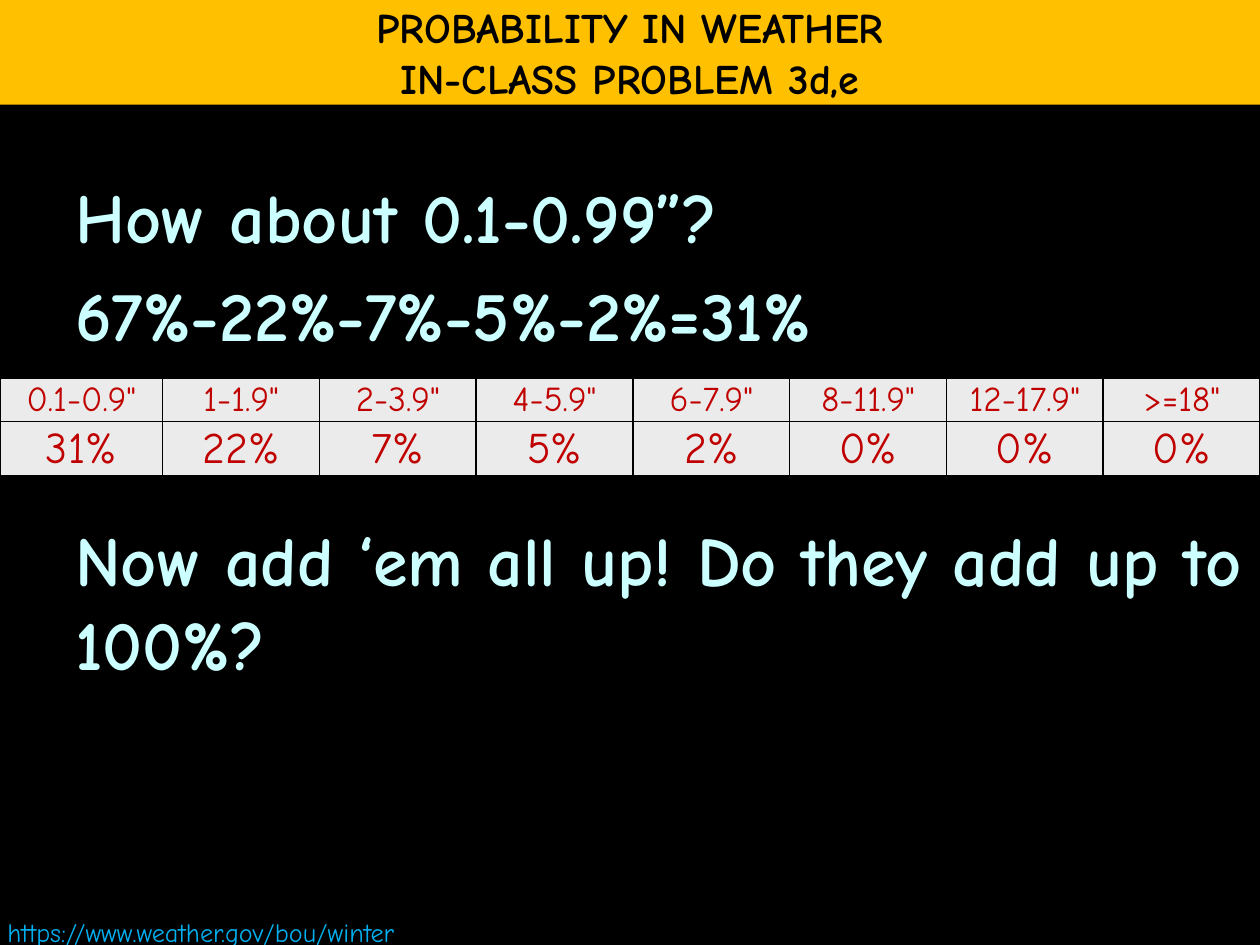
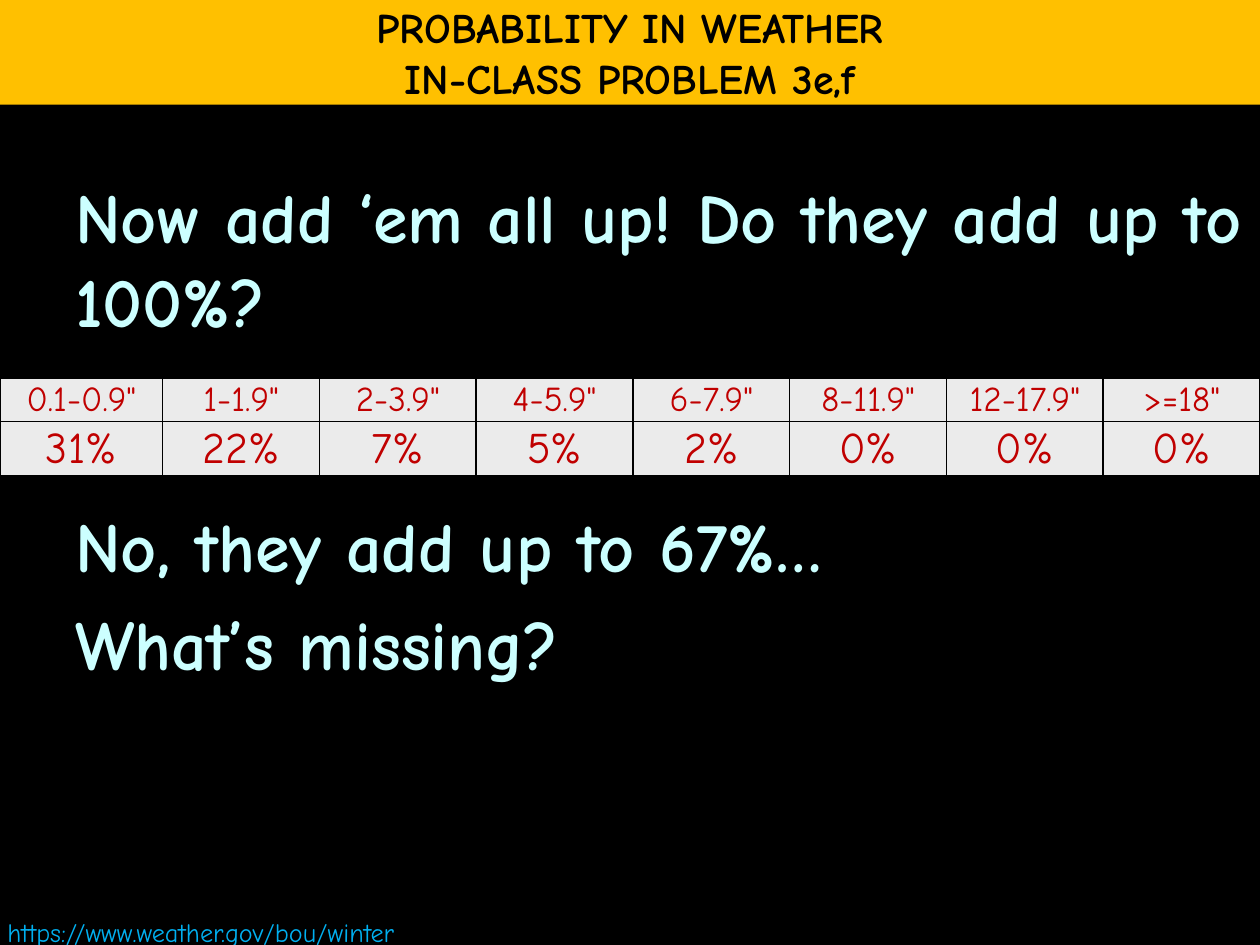
"""Build two weather probability slides with a shared snowfall table."""
from dataclasses import dataclass

from lxml import etree
from pptx import Presentation
from pptx.dml.color import RGBColor
from pptx.enum import shapes, text
from pptx.oxml import ns
from pptx.util import Cm, Length, Pt

BLACK = RGBColor(0x00, 0x00, 0x00)
AMBER = RGBColor(0xFF, 0xC0, 0x00)
PALE_CYAN = RGBColor(0xCC, 0xFF, 0xFF)
LINK_BLUE = RGBColor(0x00, 0xB0, 0xF0)
DARK_RED = RGBColor(0xC0, 0x00, 0x00)
LIGHT_GREY = RGBColor(0xEB, 0xEB, 0xEB)

FONT = "Comic Neue"
WIDTH, HEIGHT = Cm(25.4), Cm(19.05)
TITLE = "PROBABILITY IN WEATHER"
SOURCE = "https://www.weather.gov/bou/winter"
LINE_GAP, TABLE_GAP = Pt(8), Pt(92)
FIRST_COLUMN = Cm(3.28)
CELL_INSET = Cm(0.03)


@dataclass(frozen=True)
class TextStyle:
    size: int
    color: RGBColor
    bold: bool = False
    align: text.PP_ALIGN = text.PP_ALIGN.LEFT


@dataclass(frozen=True)
class TableRow:
    height: Length
    style: TextStyle
    values: tuple[str, ...]


@dataclass(frozen=True)
class Problem:
    number: str
    above: tuple[str, ...]
    below: tuple[str, ...]


TITLE_STYLE = TextStyle(24, BLACK, True, text.PP_ALIGN.CENTER)
BODY_STYLE = TextStyle(40, PALE_CYAN, True)
SOURCE_STYLE = TextStyle(15, LINK_BLUE)
RANGE_STYLE = TextStyle(20, DARK_RED, align=text.PP_ALIGN.CENTER)
CHANCE_STYLE = TextStyle(25, DARK_RED, align=text.PP_ALIGN.CENTER)

SNOWFALL = (
    TableRow(Cm(0.87), RANGE_STYLE, (
        '0.1-0.9"', '1-1.9"', '2-3.9"', '4-5.9"',
        '6-7.9"', '8-11.9"', '12-17.9"', '>=18"')),
    TableRow(Cm(1.08), CHANCE_STYLE, (
        "31%", "22%", "7%", "5%", "2%", "0%", "0%", "0%")),
)

ADD_UP = "Now add ‘em all up! Do they add up to 100%?"
PROBLEMS = (
    Problem("3d,e", ("How about 0.1-0.99”?", "67%-22%-7%-5%-2%=31%"), (ADD_UP,)),
    Problem("3e,f", (ADD_UP,), ("No, they add up to 67%…", "What’s missing?")),
)


def write(tf, lines: tuple[str, ...], style: TextStyle) -> None:
    """Fill a text frame with one styled paragraph per line."""
    tf.text = "\n".join(lines)
    for p in tf.paragraphs:
        p.alignment = style.align
        for r in p.runs:
            r.font.name = FONT
            r.font.size = Pt(style.size)
            r.font.bold = style.bold
            r.font.color.rgb = style.color


def add_body(slide, problem: Problem) -> None:
    """Add the question and answer, leaving a gap for the table."""
    sp = slide.shapes.add_textbox(Cm(1.27), Cm(3.38), Cm(24.13), Cm(15.67))
    tf = sp.text_frame
    tf.word_wrap = True
    write(tf, problem.above + problem.below, BODY_STYLE)
    for i, p in enumerate(tf.paragraphs):
        p.space_before = TABLE_GAP if i == len(problem.above) else LINE_GAP


def add_source(slide) -> None:
    """Add the source address at the bottom left."""
    sp = slide.shapes.add_textbox(Cm(-0.1), Cm(18.34), Cm(12.73), Cm(0.89))
    tf = sp.text_frame
    tf.word_wrap = True
    tf.auto_size = text.MSO_AUTO_SIZE.SHAPE_TO_FIT_TEXT
    write(tf, (SOURCE,), SOURCE_STYLE)


def add_borders(cell) -> None:
    """Draw a thin black line on each side of a cell."""
    props = cell._tc.get_or_add_tcPr()
    for side in ("a:lnL", "a:lnR", "a:lnT", "a:lnB"):
        ln = etree.SubElement(props, ns.qn(side), w=str(Pt(1)))
        fill = etree.SubElement(ln, ns.qn("a:solidFill"))
        etree.SubElement(fill, ns.qn("a:srgbClr"), val=str(BLACK))


def add_snowfall_table(slide) -> None:
    """Add the table of snowfall ranges and their chances."""
    count = len(SNOWFALL[0].values)
    height = sum(row.height for row in SNOWFALL)
    table = slide.shapes.add_table(
        len(SNOWFALL), count, 0, Cm(7.62), WIDTH, height).table
    for i, column in enumerate(table.columns):
        column.width = FIRST_COLUMN if i == 0 else (WIDTH - FIRST_COLUMN) // (count - 1)
    for row, spec_row in zip(table.rows, SNOWFALL):
        row.height = spec_row.height
        for cell, value in zip(row.cells, spec_row.values):
            cell.margin_left = cell.margin_right = cell.margin_top = CELL_INSET
            cell.margin_bottom = 0
            cell.vertical_anchor = text.MSO_ANCHOR.MIDDLE
            add_borders(cell)
            cell.fill.solid()
            cell.fill.fore_color.rgb = LIGHT_GREY
            write(cell.text_frame, (value,), spec_row.style)


def add_title_band(slide, number: str) -> None:
    """Add the amber title band."""
    sp = slide.shapes.add_shape(
        shapes.MSO_SHAPE.RECTANGLE, 0, 0, WIDTH, Cm(2.11))
    sp.shadow.inherit = False
    sp.fill.solid()
    sp.fill.fore_color.rgb = AMBER
    sp.line.fill.background()
    tf = sp.text_frame
    tf.word_wrap = False
    tf.vertical_anchor = text.MSO_ANCHOR.MIDDLE
    write(tf, (TITLE, f"IN-CLASS PROBLEM {number}"), TITLE_STYLE)


def add_problem_slide(prs, problem: Problem) -> None:
    """Add one complete problem slide."""
    slide = prs.slides.add_slide(prs.slide_layouts[6])
    background = slide.background.fill
    background.solid()
    background.fore_color.rgb = BLACK
    add_body(slide, problem)
    add_source(slide)
    add_snowfall_table(slide)
    add_title_band(slide, problem.number)


def main() -> None:
    """Build and save the presentation."""
    prs = Presentation()
    prs.slide_width, prs.slide_height = WIDTH, HEIGHT
    for problem in PROBLEMS:
        add_problem_slide(prs, problem)
    prs.save("out.pptx")


if __name__ == "__main__":
    main()
